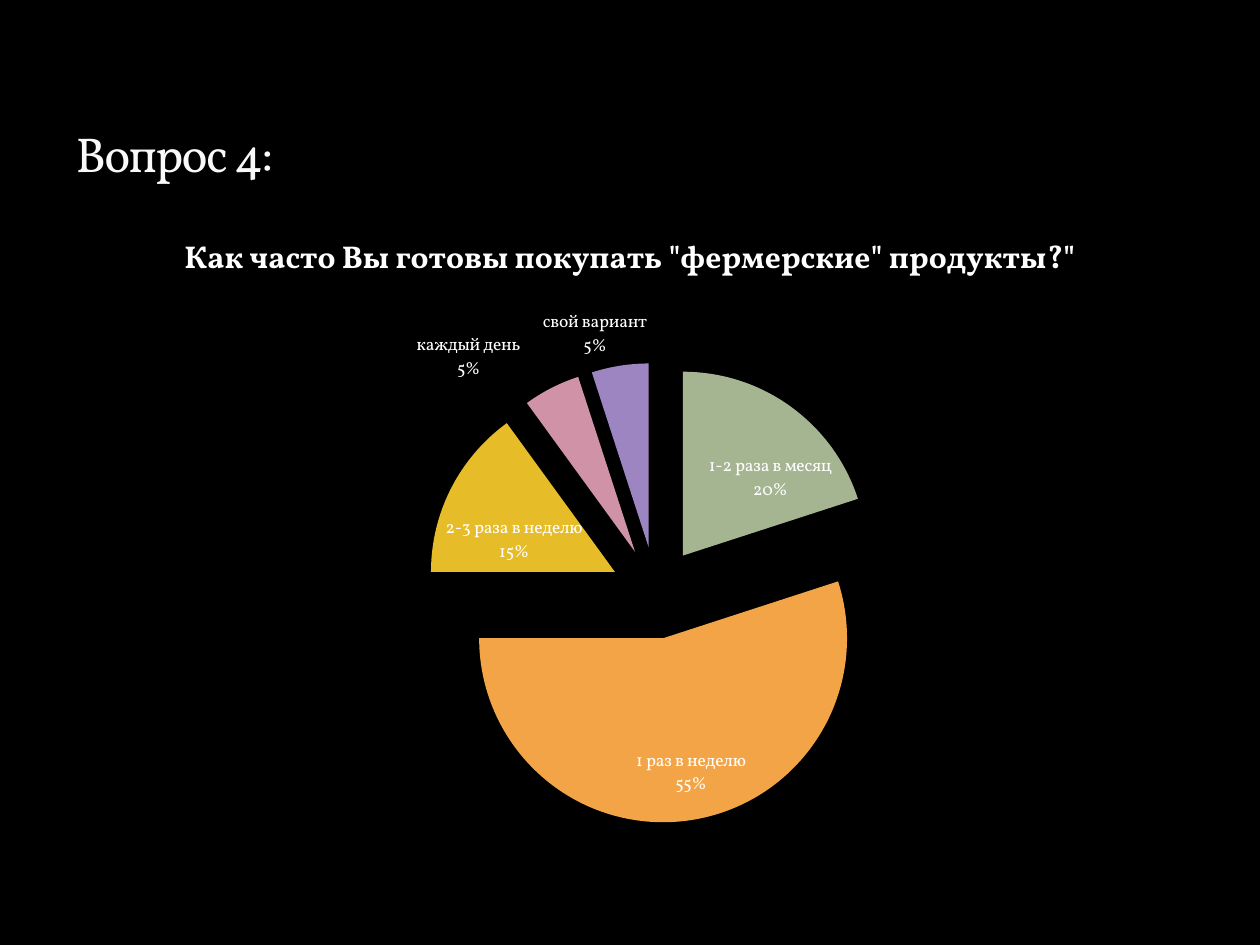
from lxml.etree import SubElement
from pptx import Presentation
from pptx.chart.data import CategoryChartData
from pptx.dml.color import RGBColor
from pptx.enum.chart import XL_CHART_TYPE as ChartType, XL_LABEL_POSITION as LabelPosition
from pptx.enum.text import MSO_ANCHOR as Anchor, PP_ALIGN as Align
from pptx.oxml.ns import qn
from pptx.util import Pt

# Content
TITLE = "Вопрос 4:"
QUESTION = 'Как часто Вы готовы покупать "фермерские" продукты?"'
INSIDE, OUTSIDE = LabelPosition.INSIDE_END, LabelPosition.OUTSIDE_END
ANSWERS = [  # answer, percent, colour name, label position, label shift in px
    ("1-2 раза в месяц", 20, "sage", INSIDE, (45, 43)),
    ("1 раз в неделю", 55, "orange", INSIDE, (55, -15)),
    ("2-3 раза в неделю", 15, "yellow", INSIDE, (-12, 26)),
    ("каждый день", 5, "pink", OUTSIDE, (-28, 1)),
    ("свой вариант", 5, "violet", OUTSIDE, (28, 1)),
]
COLORS = {
    "black": "000000", "white": "FFFFFF", "title": "F9F9F9",
    "sage": "A5B592", "orange": "F3A447", "yellow": "E7BC29",
    "pink": "D092A7", "violet": "9C85C0",
}
FONT = "Vollkorn"

# Geometry in px, 126 to the inch
PX = 914400 // 126
SLIDE = (1260, 945)
TITLE_BOX = (63, 21, 1134, 168)
CHART_BOX = (63, 210, 1134, 630)
PIE_BOX = (426, 363, 460, 460)
EXPLOSION = 25


def emu(lengths):
    return [length * PX for length in lengths]


def color(name):
    return RGBColor.from_string(COLORS[name])


def style(font, size, name, bold=False):
    font.name, font.size, font.bold = FONT, Pt(size), bold
    font.color.rgb = color(name)


def add_layout(parent, position, settings):
    """Give a chart part a manual layout, as its child number position."""
    layout = parent.find(qn("c:layout"))
    if layout is None:
        layout = parent.makeelement(qn("c:layout"))
        parent.insert(position, layout)
    manual = SubElement(layout, qn("c:manualLayout"))
    for tag, value in settings:
        SubElement(manual, qn(f"c:{tag}")).set("val", str(value))


deck = Presentation()
deck.slide_width, deck.slide_height = emu(SLIDE)
page = deck.slides.add_slide(deck.slide_layouts[5])
page.background.fill.solid()
page.background.fill.fore_color.rgb = color("black")

# Title
title = page.shapes.title
title.left, title.top, title.width, title.height = emu(TITLE_BOX)
title.text_frame.vertical_anchor = Anchor.BOTTOM
para = title.text_frame.paragraphs[0]
para.alignment = Align.LEFT
span = para.add_run()
span.text = TITLE
style(span.font, 28, "title")
span.font._element.set("spc", "-100")

# Pie chart
data = CategoryChartData()
data.categories = [answer for answer, *_ in ANSWERS]
data.add_series(QUESTION, [percent for _, percent, *_ in ANSWERS])
chart = page.shapes.add_chart(ChartType.PIE, *emu(CHART_BOX), data).chart
style(chart.font, 10, "white")
chart.has_legend = False
chart.has_title = True
heading = chart.chart_title.text_frame.paragraphs[0].add_run()
heading.text = QUESTION
style(heading.font, 18, "white", bold=True)

# Plot area, as fractions of the chart
left, top, width, height = CHART_BOX
x, y, w, h = PIE_BOX
add_layout(chart.element.chart.plotArea, 0, [
    ("layoutTarget", "inner"), ("xMode", "edge"), ("yMode", "edge"),
    ("x", (x - left) / width), ("y", (y - top) / height),
    ("w", w / width), ("h", h / height),
])

# Slices and their labels
plot = chart.plots[0]
plot.vary_by_categories = True
series = plot.series[0]
labels = series.data_labels
labels.show_category_name = labels.show_percentage = True
labels.show_value = False
style(labels.font, 10, "white")
for leader in labels._element.findall(qn("c:showLeaderLines")):
    leader.set("val", "0")
for index, (_, _, name, position, (dx, dy)) in enumerate(ANSWERS):
    point = series.points[index]
    point.format.fill.solid()
    point.format.fill.fore_color.rgb = color(name)
    label = point.data_label
    label.position = position
    element = label._dLbl
    add_layout(element, 1, [("x", dx / width), ("y", dy / height)])
    for tag, shown in (("showVal", "0"), ("showCatName", "1"), ("showPercent", "1")):
        element.find(qn(f"c:{tag}")).set("val", shown)
    SubElement(element, qn("c:separator")).text = "\n"

# Explosion comes before the points in the series
explosion = series._element.makeelement(qn("c:explosion"), {"val": str(EXPLOSION)})
series._element.find(qn("c:dPt")).addprevious(explosion)

deck.save("out.pptx")
